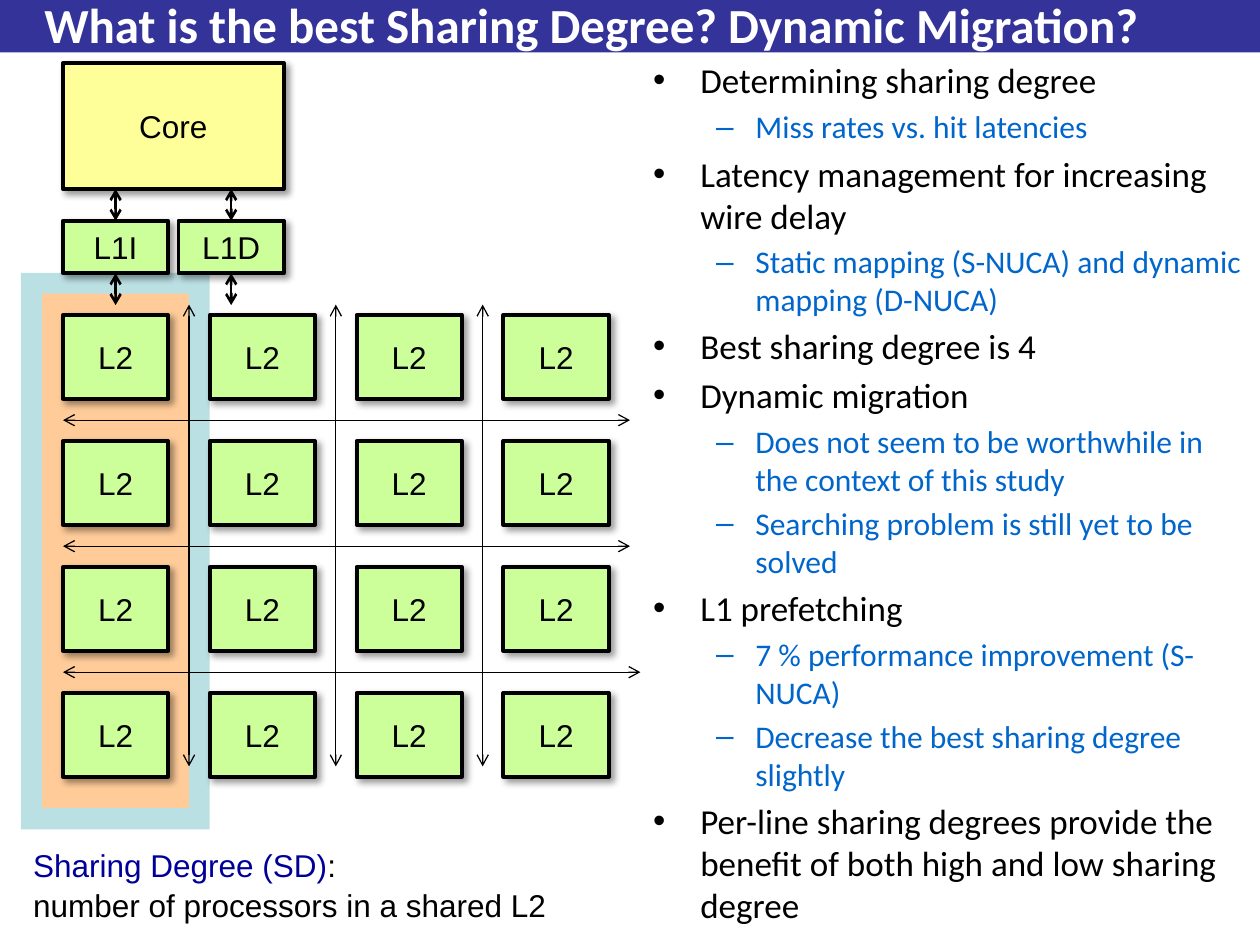
import pptx
import pptx.dml.color
import pptx.enum.shapes
import pptx.enum.text
import pptx.oxml
import pptx.oxml.ns
import pptx.util
from lxml import etree

Cm = pptx.util.Cm
Pt = pptx.util.Pt
RGBColor = pptx.dml.color.RGBColor
qn = pptx.oxml.ns.qn

BLACK = RGBColor(0x00, 0x00, 0x00)
WHITE = RGBColor(0xFF, 0xFF, 0xFF)
BAND_BLUE = RGBColor(0x33, 0x33, 0x99)
ITEM_BLUE = RGBColor(0x00, 0x66, 0xCC)
TERM_BLUE = RGBColor(0x00, 0x00, 0x99)
OUTER_TEAL = RGBColor(0xBB, 0xE0, 0xE3)
INNER_ORANGE = RGBColor(0xFF, 0xCC, 0x99)
CORE_YELLOW = RGBColor(0xFF, 0xFF, 0x99)
CACHE_GREEN = RGBColor(0xCC, 0xFF, 0x99)

# Cache grid, in centimetres
GRID_LEFT, GRID_TOP = 1.27, 6.35
COL_PITCH, ROW_PITCH = 2.96, 2.54
CACHE_W, CACHE_H = 2.12, 1.69

POINTS = [
    (0, "Determining sharing degree"),
    (1, "Miss rates vs. hit latencies"),
    (0, "Latency management for increasing wire delay"),
    (1, "Static mapping (S-NUCA) and dynamic mapping (D-NUCA)"),
    (0, "Best sharing degree is 4"),
    (0, "Dynamic migration"),
    (1, "Does not seem to be worthwhile in the context of this study"),
    (1, "Searching problem is still yet to be solved"),
    (0, "L1 prefetching"),
    (1, "7 % performance improvement (S-NUCA)"),
    (1, "Decrease the best sharing degree slightly"),
    (0, "Per-line sharing degrees provide the benefit of both high and low "
        "sharing degree"),
]


def place(sp, left, top, width, height):
    sp.left, sp.top, sp.width, sp.height = map(Cm, (left, top, width, height))


def format_run(r, size, color, name, bold=False):
    r.font.size = Pt(size)
    r.font.color.rgb = color
    r.font.name = name
    r.font.bold = bold


def add_panel(s, left, top, width, height, color):
    """Plain filled rectangle without outline."""
    sp = s.shapes.add_shape(pptx.enum.shapes.MSO_SHAPE.RECTANGLE,
                            Cm(left), Cm(top), Cm(width), Cm(height))
    sp.shadow.inherit = False
    sp.fill.solid()
    sp.fill.fore_color.rgb = color
    sp.line.fill.background()
    return sp


def add_block(s, text, left, top, width, height, color):
    """Outlined, labelled block with a soft shadow."""
    sp = add_panel(s, left, top, width, height, color)
    sp.line.color.rgb = BLACK
    sp.line.width = Pt(2.25)
    effects = sp.element.spPr.find(qn("a:effectLst"))
    shadow = etree.SubElement(effects, qn("a:outerShdw"), blurRad=str(Pt(4)),
                              dist=str(Pt(3)), dir="2700000", rotWithShape="0")
    shade = etree.SubElement(shadow, qn("a:srgbClr"), val=str(BLACK))
    etree.SubElement(shade, qn("a:alpha"), val="40000")

    tf = sp.text_frame
    tf.text = text
    tf.vertical_anchor = pptx.enum.text.MSO_ANCHOR.MIDDLE
    p = tf.paragraphs[0]
    p.alignment = pptx.enum.text.PP_ALIGN.CENTER
    format_run(p.runs[0], 18, BLACK, "Arial")


def add_double_arrow(s, x1, y1, x2, y2, width):
    line = s.shapes.add_connector(pptx.enum.shapes.MSO_CONNECTOR.STRAIGHT,
                                  Cm(x1), Cm(y1), Cm(x2), Cm(y2))
    line.line.color.rgb = BLACK
    line.line.width = Pt(width)
    spPr = line.element.spPr
    for end in ("a:headEnd", "a:tailEnd"):
        etree.SubElement(spPr.find(qn("a:ln")), qn(end), type="arrow")
    etree.SubElement(spPr, qn("a:effectLst"))


def fill_title(s):
    title = s.shapes.title
    place(title, 0.64, 0.13, 23.5, 0.71)
    tf = title.text_frame
    tf.text = "What is the best Sharing Degree? Dynamic Migration?"
    tf.auto_size = pptx.enum.text.MSO_AUTO_SIZE.NONE
    tf.vertical_anchor = pptx.enum.text.MSO_ANCHOR.MIDDLE
    p = tf.paragraphs[0]
    p.alignment = pptx.enum.text.PP_ALIGN.LEFT
    format_run(p.runs[0], 28, WHITE, "Calibri", bold=True)
    # The band lies behind the title
    band = add_panel(s, 0, 0, 25.4, 1.06, BAND_BLUE)
    title.element.addprevious(band.element)


def fill_points(s):
    body = s.placeholders[1]
    place(body, 12.91, 1.06, 12.49, 17.99)
    tf = body.text_frame
    tf.auto_size = pptx.enum.text.MSO_AUTO_SIZE.NONE
    for i, (level, text) in enumerate(POINTS):
        p = tf.add_paragraph() if i else tf.paragraphs[0]
        p.text = text
        p.level = level
        size, color = (18, ITEM_BLUE) if level else (20, BLACK)
        format_run(p.runs[0], size, color, "Calibri")


def add_processor(s):
    add_block(s, "Core", 1.27, 1.27, 4.45, 2.54, CORE_YELLOW)
    for text, left in (("L1I", 1.27), ("L1D", 3.6)):
        add_block(s, text, left, 4.45, CACHE_W, 1.06, CACHE_GREEN)
        x = left + CACHE_W / 2
        for top in (3.81, 5.51):
            add_double_arrow(s, x, top, x, top + 0.64, 1.5)


def add_cache_grid(s):
    for row in range(4):
        for col in range(4):
            add_block(s, "L2", GRID_LEFT + col * COL_PITCH,
                      GRID_TOP + row * ROW_PITCH, CACHE_W, CACHE_H, CACHE_GREEN)
    # Buses run in the gaps between columns and rows
    for i in range(3):
        x = 3.81 + i * COL_PITCH
        add_double_arrow(s, x, 6.14, x, 15.45, 0.75)
    for i, right in enumerate((12.7, 12.7, 12.91)):
        y = 8.47 + i * ROW_PITCH
        add_double_arrow(s, GRID_LEFT, y, right, y, 0.75)


def add_caption(s):
    sp = s.shapes.add_textbox(Cm(0.42), Cm(16.93), Cm(10.95), Cm(2))
    tf = sp.text_frame
    tf.word_wrap = False
    tf.text = "Sharing Degree (SD)"
    p = tf.paragraphs[0]
    p.add_run().text = ":"
    for r, color in zip(p.runs, (TERM_BLUE, BLACK)):
        format_run(r, 18, color, "Arial")
    p = tf.add_paragraph()
    p.text = "number of processors in a shared L2"
    p.space_before = Pt(1)
    format_run(p.runs[0], 18, BLACK, "Arial")


def main():
    prs = pptx.Presentation()
    prs.slide_width, prs.slide_height = Cm(25.4), Cm(19.05)
    s = prs.slides.add_slide(prs.slide_layouts[1])

    # Heading and list
    fill_title(s)
    fill_points(s)

    # Sharing region behind the first cache column
    add_panel(s, 0.42, 5.5, 3.81, 11.22, OUTER_TEAL)
    add_panel(s, 0.85, 5.92, 2.96, 10.37, INNER_ORANGE)

    # Diagram and its caption
    add_processor(s)
    add_cache_grid(s)
    add_caption(s)
    prs.save("out.pptx")


if __name__ == "__main__":
    main()
